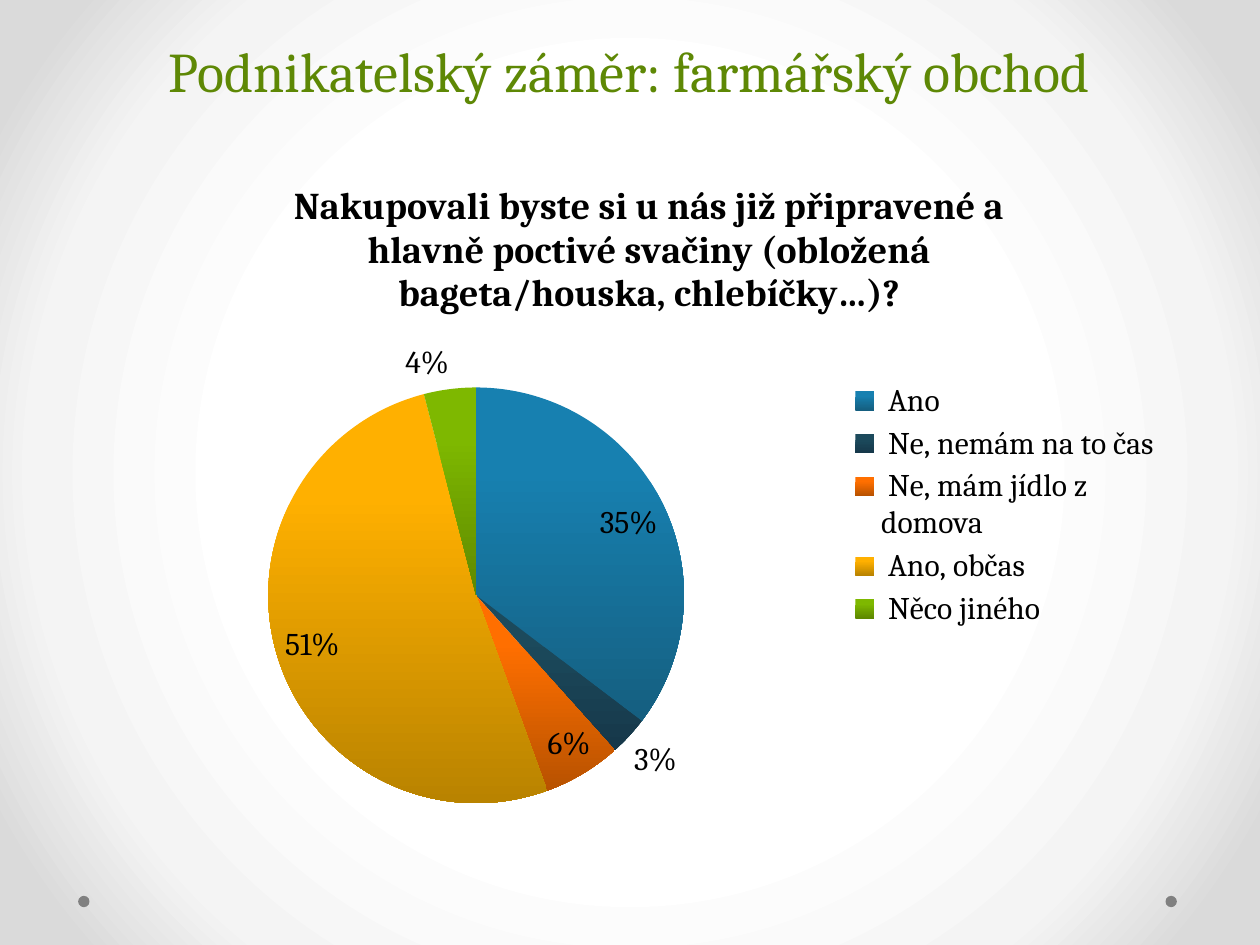
"""Builds a survey slide with a pie chart about a farm shop."""
import dataclasses

import lxml.etree
import pptx
import pptx.chart.data
import pptx.dml.color
import pptx.enum.chart
import pptx.enum.shapes
import pptx.enum.text
import pptx.oxml
import pptx.oxml.ns
import pptx.util

Inches = pptx.util.Inches
Pt = pptx.util.Pt

QUESTION = (
    "Nakupovali byste si u nás již připravené a hlavně poctivé svačiny "
    "(obložená bageta/houska, chlebíčky…)?"
)
ANSWERS = {
    " Ano": 35,
    " Ne, nemám na to čas": 3,
    " Ne, mám jídlo z domova": 6,
    " Ano, občas": 51,
    " Něco jiného": 4,
}


@dataclasses.dataclass(frozen=True)
class Theme:
    font: str = "Cambria"
    title: str = "5E8805"
    text: str = "000000"
    dot: str = "808080"
    title_size: float = 32
    question_size: float = 21.6
    chart_size: float = 18
    backdrop: tuple = ((50, "FFFFFF"), (76, "F4F4F4"), (92, "DADADA"))
    slices: tuple = (
        ("1780B0", "155F80"),
        ("1C4A5C", "16384A"),
        ("FF6F00", "B85200"),
        ("FFB000", "B98300"),
        ("7EB800", "5E8800"),
    )


def rgb(value):
    return pptx.dml.color.RGBColor.from_string(value)


def style_font(font, name, size, color, bold=False):
    font.name, font.size, font.bold = name, Pt(size), bold
    font.color.rgb = rgb(color)


def write_text(frame, text, line_spacing=None, **style):
    para = frame.paragraphs[0]
    para.alignment = pptx.enum.text.PP_ALIGN.CENTER
    if line_spacing:
        para.line_spacing = Pt(line_spacing)
    span = para.add_run()
    span.text = text
    style_font(span.font, **style)


def place(element, left, top, width, height, inner=False):
    for old in element.findall(pptx.oxml.ns.qn("c:layout")):
        element.remove(old)
    target = '<c:layoutTarget val="inner"/>' if inner else ""
    modes = '<c:xMode val="edge"/><c:yMode val="edge"/>'
    layout = pptx.oxml.parse_xml(
        f'<c:layout {pptx.oxml.ns.nsdecls("c")}><c:manualLayout>{target}{modes}'
        f'<c:x val="{left}"/><c:y val="{top}"/><c:w val="{width}"/><c:h val="{height}"/>'
        "</c:manualLayout></c:layout>"
    )
    element.insert(0 if inner else 1, layout)


class SlideBuilder:
    def __init__(self, deck, theme):
        self.theme = theme
        self.slide = deck.slides.add_slide(deck.slide_layouts[6])

    def backdrop(self):
        fill = self.slide.background.fill
        fill.gradient()
        qn = pptx.oxml.ns.qn
        gradient = self.slide.background._cSld.find(".//" + qn("a:gradFill"))
        for child in list(gradient):
            gradient.remove(child)
        stops = lxml.etree.SubElement(gradient, qn("a:gsLst"))
        for position, color in self.theme.backdrop:
            stop = lxml.etree.SubElement(stops, qn("a:gs"), pos=str(position * 1000))
            lxml.etree.SubElement(stop, qn("a:srgbClr"), val=color)
        circle = lxml.etree.SubElement(gradient, qn("a:path"), path="circle")
        sides = dict.fromkeys("ltrb", "50000")
        lxml.etree.SubElement(circle, qn("a:fillToRect"), **sides)

    def dot(self, left, top, size):
        shape = self.slide.shapes.add_shape(
            pptx.enum.shapes.MSO_SHAPE.OVAL,
            Inches(left), Inches(top), Inches(size), Inches(size),
        )
        shape.shadow.inherit = False
        shape.fill.solid()
        shape.fill.fore_color.rgb = rgb(self.theme.dot)
        shape.line.fill.background()

    def title(self, text, left, top, width, height):
        box = self.slide.shapes.add_textbox(
            Inches(left), Inches(top), Inches(width), Inches(height)
        )
        frame = box.text_frame
        frame.word_wrap = True
        frame.vertical_anchor = pptx.enum.text.MSO_ANCHOR.BOTTOM
        write_text(frame, text, line_spacing=58, name=self.theme.font,
                   size=self.theme.title_size, color=self.theme.title)

    def pie(self, question, answers, left, top, width, height):
        theme = self.theme
        data = pptx.chart.data.CategoryChartData(number_format='0"%"')
        data.categories = list(answers)
        data.add_series(question, list(answers.values()))
        chart = self.slide.shapes.add_chart(
            pptx.enum.chart.XL_CHART_TYPE.PIE,
            Inches(left), Inches(top), Inches(width), Inches(height), data,
        ).chart
        style_font(chart.font, theme.font, theme.chart_size, theme.text)
        chart.has_title = True
        write_text(chart.chart_title.text_frame, question, name=theme.font,
                   size=theme.question_size, color=theme.text, bold=True)
        chart.has_legend = True
        chart.legend.position = pptx.enum.chart.XL_LEGEND_POSITION.RIGHT
        chart.legend.include_in_layout = False
        place(chart.legend._element, 0.69, 0.32, 0.3, 0.37)
        plot = chart.plots[0]
        place(plot._element.getparent(), 0.135, 0.335, 0.398, 0.6, inner=True)
        plot.vary_by_categories = True
        plot.has_data_labels = True
        labels = plot.data_labels
        labels.show_value = True
        labels.number_format = '0"%"'
        labels.number_format_is_linked = False
        labels.position = pptx.enum.chart.XL_LABEL_POSITION.BEST_FIT
        style_font(labels.font, theme.font, theme.chart_size, theme.text)
        for index, colors in enumerate(theme.slices):
            fill = plot.series[0].points[index].format.fill
            fill.gradient()
            fill.gradient_angle = 270
            for stop, color, position in zip(fill.gradient_stops, colors, (0.25, 1)):
                stop.color.rgb = rgb(color)
                stop.position = position


def main():
    deck = pptx.Presentation()
    deck.slide_width, deck.slide_height = Inches(10), Inches(7.5)
    builder = SlideBuilder(deck, Theme())
    builder.backdrop()
    for left in (9.25, 0.62):
        builder.dot(left, 7.11, 0.09)
    builder.title("Podnikatelský záměr: farmářský obchod", 0.5, -0.88, 9, 1.75)
    builder.pie(QUESTION, ANSWERS, 1.01, 1.22, 8.29, 5.52)
    deck.save("out.pptx")


if __name__ == "__main__":
    main()
